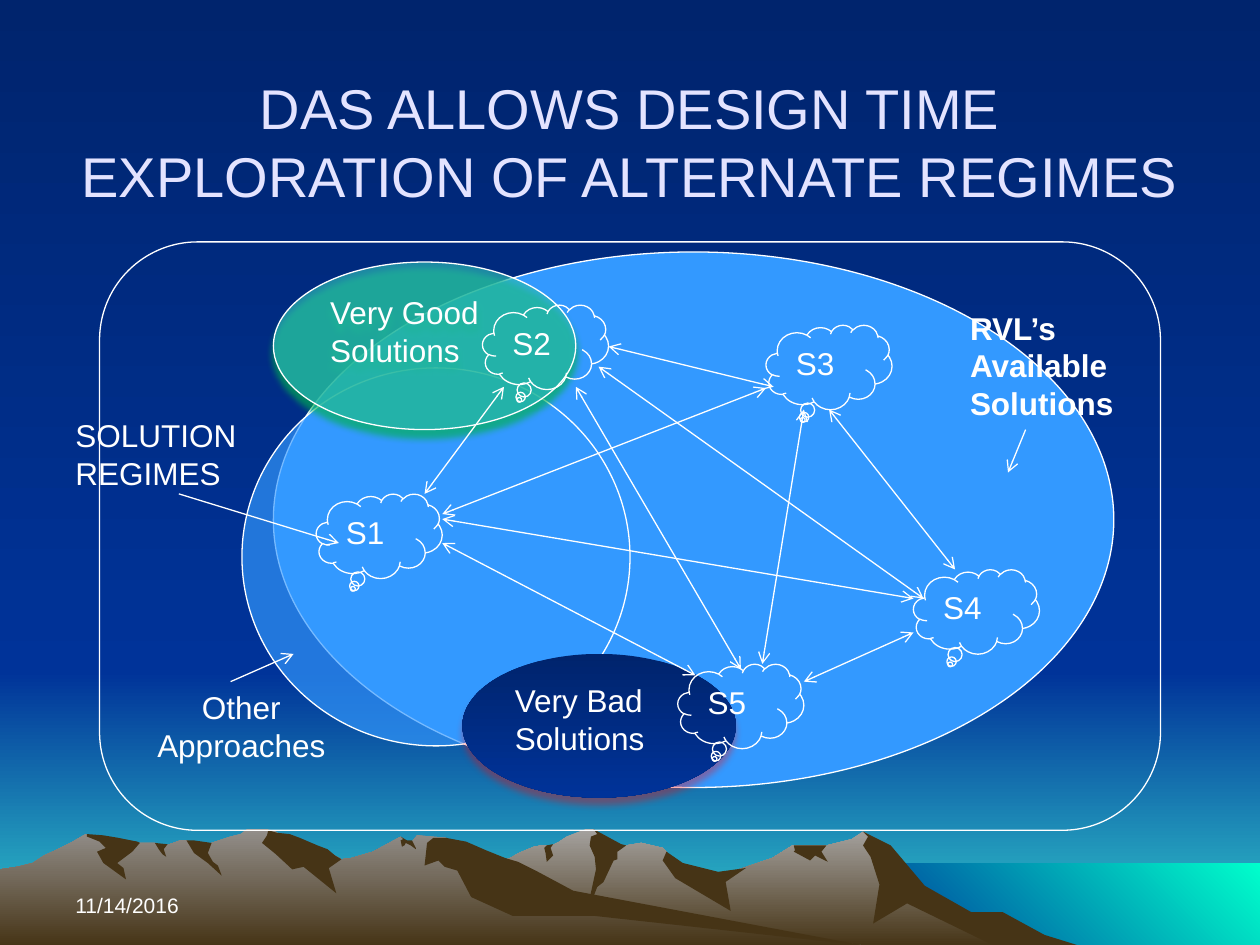
from dataclasses import dataclass

from lxml import etree
from pptx import Presentation
from pptx.dml.color import RGBColor
from pptx.enum.shapes import MSO_CONNECTOR, MSO_SHAPE
from pptx.enum.text import MSO_ANCHOR, MSO_AUTO_SIZE, PP_ALIGN
from pptx.oxml.ns import qn
from pptx.util import Inches, Pt

ELLIPSE, ROUNDED, CLOUD = MSO_SHAPE.OVAL, MSO_SHAPE.ROUNDED_RECTANGLE, MSO_SHAPE.CLOUD_CALLOUT
STRAIGHT = MSO_CONNECTOR.STRAIGHT
TOP, MIDDLE, BOTTOM = MSO_ANCHOR.TOP, MSO_ANCHOR.MIDDLE, MSO_ANCHOR.BOTTOM
LEFT, CENTER = PP_ALIGN.LEFT, PP_ALIGN.CENTER
NO_AUTOSIZE, GROW = MSO_AUTO_SIZE.NONE, MSO_AUTO_SIZE.SHAPE_TO_FIT_TEXT


@dataclass(frozen=True)
class Theme:
    font: str = "Arial"
    title_size: int = 32
    label_size: int = 18
    date_size: int = 12
    line_width: float = 0.75
    title: str = "E3E3FF"
    white: str = "FFFFFF"
    blue: str = "3399FF"
    teal: str = "2DB9B9"
    good_shadow: str = "00B050"
    bad_shadow: str = "FF0000"
    rock: str = "463416"
    sky: tuple = ("00246D", "003399")
    horizon: tuple = ("003399", "33CCCC")
    sea: tuple = ("003399", "00FFCC")
    peak: tuple = ("A5A29F", "463416")
    ridge: tuple = ("938F8B", "463416")


THEME = Theme()
DOWN, UP_RIGHT = 270, 45

# Outlines are x, y pairs in hundredths of an inch.
SKY = [1000, 533, 0, 533, 0, 0, 1000, 0]
HORIZON = [1000, 750, 0, 750, 0, 533, 1000, 533]
SEA = [1000, 752, 683, 752, 683, 685, 1000, 685]
PEAKS = [802, 740, 778, 727, 764, 723, 723, 698, 702, 671, 685, 660, 676, 666, 656, 671, 629, 671,
         613, 681, 566, 697, 536, 690, 529, 676, 526, 673, 509, 669, 497, 671, 486, 673, 474, 661,
         471, 658, 465, 658, 450, 664, 444, 668, 438, 671, 430, 671, 424, 672, 412, 677, 405, 681,
         394, 685, 355, 698, 327, 709, 277, 739, 258, 751, 821, 751]
RIDGE = [690, 751, 667, 748, 432, 712, 354, 665, 331, 663, 327, 668, 323, 668, 318, 664, 296, 676,
         279, 681, 271, 682, 260, 676, 236, 681, 223, 663, 219, 660, 212, 658, 196, 658, 191, 662,
         183, 664, 168, 669, 160, 671, 148, 667, 143, 667, 132, 671, 128, 671, 123, 669, 111, 669,
         94, 671, 68, 662, 56, 669, 46, 674, 35, 679, 26, 685, 14, 688, 0, 690, 0, 751]
PEAK_SHADES = [
    [796, 724, 771, 724, 734, 703, 707, 671, 685, 660, 689, 664, 685, 671, 691, 680, 698, 702,
     693, 733, 720, 717, 792, 752, 858, 751, 829, 742],
    [471, 658, 474, 662, 469, 664, 468, 671, 472, 680, 473, 690, 465, 727, 474, 704, 479, 700,
     487, 683, 490, 682, 490, 676, 497, 671, 493, 670],
    [529, 676, 526, 683, 536, 697, 580, 723, 576, 700, 592, 689, 570, 692, 542, 685],
    [650, 671, 630, 671, 631, 675, 630, 676, 643, 683, 647, 679, 657, 684, 652, 676, 656, 671],
    [433, 677, 432, 673, 434, 671, 439, 670, 437, 673, 439, 679, 434, 684],
]
RIDGE_SHADES = [
    [212, 663, 208, 669, 219, 678, 232, 690, 241, 688, 267, 709, 261, 689, 271, 682, 266, 679,
     260, 674, 252, 671, 238, 665, 230, 662, 220, 661, 213, 659],
    [370, 668, 354, 665, 344, 665, 339, 669, 337, 687, 348, 683, 353, 688, 363, 691, 374, 712,
     407, 727, 472, 727, 690, 751, 683, 750, 455, 707, 427, 692, 411, 684, 401, 681, 386, 675],
    [318, 667, 320, 666, 318, 664, 323, 667, 327, 667, 330, 673, 330, 674, 326, 671, 322, 669,
     321, 671, 319, 672],
    [154, 667, 168, 669, 165, 677, 169, 684, 173, 687, 176, 695, 165, 685, 154, 677, 148, 667],
    [133, 670, 130, 674, 132, 680, 129, 678, 126, 674, 123, 669],
    [109, 668, 111, 669, 105, 676, 93, 685, 98, 689, 100, 698, 82, 685, 77, 676, 84, 673, 79, 668,
     69, 664, 69, 662, 82, 663, 94, 665],
]

REGIMES = [("S2", 3.83, 2.42), ("S3", 6.08, 2.58), ("S1", 2.51, 3.92),
           ("S5", 5.38, 5.27), ("S4", 7.25, 4.52)]
TRANSITIONS = [
    (4.83, 2.75, 6.14, 3.07), (3.37, 3.92, 4, 3.07), (3.51, 4.12, 7.25, 4.75),
    (6.38, 5.41, 7.25, 5.02), (7.58, 4.52, 6.58, 3.25), (6.05, 5.27, 6.38, 3.25),
    (4.75, 2.91, 7.33, 4.75), (5.88, 5.31, 4.57, 3.07), (3.51, 4.08, 6.08, 3.08),
    (5.52, 5.36, 3.51, 4.31),
]
POINTERS = [(1.83, 5.41, 2.33, 5.19), (8.14, 3.41, 8, 3.75), (1.42, 3.92, 2.69, 4.31)]


def rgb(color):
    return RGBColor.from_string(color)


def paint(fill, color, angle=DOWN):
    if color is None:
        fill.background()
    elif isinstance(color, tuple):
        fill.gradient()
        fill.gradient_angle = angle
        for stop, stop_color in zip(fill.gradient_stops, color):
            stop.color.rgb = rgb(stop_color)
    else:
        fill.solid()
        fill.fore_color.rgb = rgb(color)


def add_alpha(color_element, percent):
    etree.SubElement(color_element, qn("a:alpha"), val=str(percent * 1000))


def write_text(frame, text, size=THEME.label_size, color=THEME.white, bold=False,
               align=LEFT, anchor=TOP, wrap=True, autosize=NO_AUTOSIZE):
    frame.word_wrap = wrap
    frame.auto_size = autosize
    frame.vertical_anchor = anchor
    frame.text = text
    for paragraph in frame.paragraphs:
        paragraph.alignment = align
        font = paragraph.font
        font.name, font.size, font.bold = THEME.font, Pt(size), bold
        font.color.rgb = rgb(color)


def add_label(slide, text, left, top, width, height, **text_format):
    label = slide.shapes.add_textbox(Inches(left), Inches(top), Inches(width), Inches(height))
    write_text(label.text_frame, text, **text_format)


def add_outline(slide, points, color, angle=DOWN):
    corners = list(zip(points[::2], points[1::2]))
    builder = slide.shapes.build_freeform(*corners[0], scale=Inches(0.01))
    builder.add_line_segments(corners[1:], close=True)
    outline = builder.convert_to_shape()
    outline.shadow.inherit = False
    paint(outline.fill, color, angle)
    outline.line.fill.background()


def add_region(slide, kind, left, top, width, height, color=None, opacity=None,
               border=THEME.white, shadow=None, text=None):
    region = slide.shapes.add_shape(kind, Inches(left), Inches(top), Inches(width), Inches(height))
    region.shadow.inherit = False
    paint(region.fill, color)
    if opacity:
        add_alpha(region.element.spPr.find(qn("a:solidFill"))[0], opacity)
    paint(region.line.fill, border)
    if border:
        region.line.width = Pt(THEME.line_width)
    if shadow:
        shadow_color, shadow_opacity = shadow
        effects = region.element.spPr.find(qn("a:effectLst"))
        cast = etree.SubElement(effects, qn("a:outerShdw"), blurRad=str(Pt(4)), dist=str(Pt(4)),
                                dir="5400000", rotWithShape="0")
        add_alpha(etree.SubElement(cast, qn("a:srgbClr"), val=shadow_color), shadow_opacity)
    if text:
        write_text(region.text_frame, text)


def add_arrow(slide, ends, both=False):
    arrow = slide.shapes.add_connector(STRAIGHT, *map(Inches, ends))
    arrow.line.width = Pt(THEME.line_width)
    arrow.line.color.rgb = rgb(THEME.white)
    for tag in ("a:headEnd", "a:tailEnd") if both else ("a:tailEnd",):
        etree.SubElement(arrow.line._get_or_add_ln(), qn(tag), type="arrow")
    etree.SubElement(arrow._element.spPr, qn("a:effectLst"))


def add_scenery(slide):
    paint(slide.background.fill, THEME.sky)
    add_outline(slide, HORIZON, THEME.horizon)
    add_outline(slide, SKY, THEME.sky)
    add_outline(slide, SEA, THEME.sea, UP_RIGHT)
    for mountain, color, shades in ((PEAKS, THEME.peak, PEAK_SHADES),
                                    (RIDGE, THEME.ridge, RIDGE_SHADES)):
        add_outline(slide, mountain, color)
        for shade in shades:
            add_outline(slide, shade, THEME.rock)


def add_title(slide, text):
    title = slide.shapes.title
    title.left, title.top, title.width, title.height = map(Inches, (0.5, 0.32, 9, 1.6))
    write_text(title.text_frame, text, size=THEME.title_size, color=THEME.title,
               align=CENTER, anchor=MIDDLE)
    slide.shapes._spTree.append(title.element)


def main():
    prs = Presentation()
    prs.slide_width, prs.slide_height = Inches(10), Inches(7.5)
    slide = prs.slides.add_slide(prs.slide_layouts[5])
    add_scenery(slide)
    add_title(slide, "DAS ALLOWS DESIGN TIME EXPLORATION OF ALTERNATE REGIMES")
    add_label(slide, "11/14/2016", 0.5, 6.83, 2.33, 0.5, size=THEME.date_size, anchor=BOTTOM)

    add_region(slide, ELLIPSE, 2.17, 2, 6.67, 4.25, THEME.blue)
    add_region(slide, ELLIPSE, 1.92, 2.92, 3.08, 3, THEME.blue, opacity=67)
    add_region(slide, ROUNDED, 0.79, 1.92, 8.42, 4.67)
    add_region(slide, ELLIPSE, 2.17, 2.08, 2.4, 1.33, THEME.teal, opacity=65,
               shadow=(THEME.good_shadow, 100), text="Very Good Solutions")
    add_region(slide, ELLIPSE, 3.67, 5.19, 2.17, 1.14, THEME.sky, border=None,
               shadow=(THEME.bad_shadow, 32), text="Very Bad Solutions")

    floating = {"wrap": False, "autosize": GROW}
    add_label(slide, "RVL’s\nAvailable\nSolutions", 7.6, 2.4, 1.35, 1.01, bold=True, **floating)
    add_label(slide, "Other\nApproaches", 1.14, 5.41, 1.55, 0.71, align=CENTER, **floating)
    add_label(slide, "SOLUTION\nREGIMES", 0.5, 3.25, 1.49, 0.71, **floating)

    for name, left, top in REGIMES:
        add_region(slide, CLOUD, left, top, 1, 0.67, text=name)
    for ends in TRANSITIONS:
        add_arrow(slide, ends, both=True)
    for ends in POINTERS:
        add_arrow(slide, ends)
    prs.save("out.pptx")


if __name__ == "__main__":
    main()
